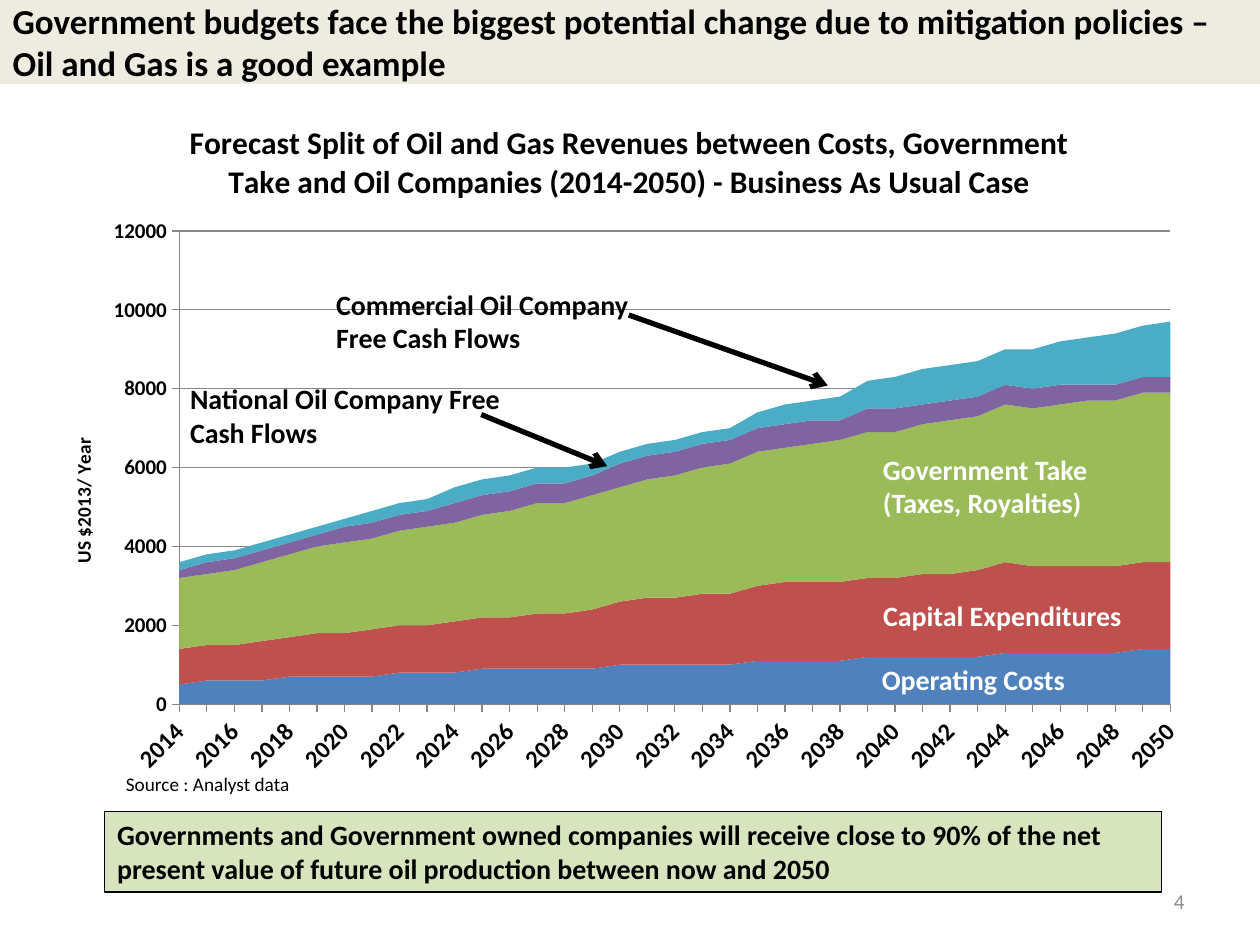
from lxml import etree
from pptx import Presentation
from pptx import util as u
from pptx.chart import data as chart_data
from pptx.dml.color import RGBColor
from pptx.enum import chart as charts, shapes, text
from pptx.oxml import ns

Pt = u.Pt
BLACK = RGBColor(0x00, 0x00, 0x00)
WHITE = RGBColor(0xFF, 0xFF, 0xFF)
GREY = RGBColor(0x8C, 0x8C, 0x8C)
AXIS_GREY = RGBColor(0x86, 0x86, 0x86)
BEIGE = RGBColor(0xEE, 0xEC, 0xE1)
PALE_GREEN = RGBColor(0xD7, 0xE4, 0xBD)
BLUE = RGBColor(0x4F, 0x81, 0xBD)
RED = RGBColor(0xC0, 0x50, 0x4D)
GREEN = RGBColor(0x9B, 0xBB, 0x59)
PURPLE = RGBColor(0x80, 0x64, 0xA2)
TEAL = RGBColor(0x4B, 0xAC, 0xC6)
FONT = "Calibri"

# Content
TITLE = ("Government budgets face the biggest potential change due to "
         "mitigation policies – Oil and Gas is a good example")
CHART_TITLE = ("Forecast Split of Oil and Gas Revenues between Costs, Government "
               "Take and Oil Companies (2014-2050) - Business As Usual Case")
AXIS_TITLE = "US $2013/ Year"
MESSAGE = ("Governments and Government owned companies will receive close to 90% of "
           "the net present value of future oil production between now and 2050")
YEARS = range(2014, 2051)
# Series in hundreds of US$ per year
SERIES = [
    ("Series 1", BLUE, [5, 6, 6, 6, 7, 7, 7, 7, 8, 8, 8, 9, 9, 9, 9, 9, 10, 10, 10,
                        10, 10, 11, 11, 11, 11, 12, 12, 12, 12, 12, 13, 13, 13, 13,
                        13, 14, 14]),
    ("Series 2", RED, [9, 9, 9, 10, 10, 11, 11, 12, 12, 12, 13, 13, 13, 14, 14, 15, 16,
                       17, 17, 18, 18, 19, 20, 20, 20, 20, 20, 21, 21, 22, 23, 22, 22,
                       22, 22, 22, 22]),
    ("Series 3", GREEN, [18, 18, 19, 20, 21, 22, 23, 23, 24, 25, 25, 26, 27, 28, 28, 29,
                         29, 30, 31, 32, 33, 34, 34, 35, 36, 37, 37, 38, 39, 39, 40, 40,
                         41, 42, 42, 43, 43]),
    ("Series 4", PURPLE, [2, 3, 3, 3, 3, 3, 4, 4, 4, 4, 5, 5, 5, 5, 5, 5, 6, 6, 6, 6, 6,
                          6, 6, 6, 5, 6, 6, 5, 5, 5, 5, 5, 5, 4, 4, 4, 4]),
    ("Series 5", TEAL, [2, 2, 2, 2, 2, 2, 2, 3, 3, 3, 4, 4, 4, 4, 4, 3, 3, 3, 3, 3, 3,
                        4, 5, 5, 6, 7, 8, 9, 9, 9, 9, 10, 11, 12, 13, 13, 14]),
]
# Text, box (left, top, width, height), format
LABELS = [
    ("Operating Costs", (496.8, 375.1, 121, 25.2), dict(color=WHITE, wrap=False)),
    ("Capital Expenditures", (497.5, 338.4, 152.6, 25.2), dict(color=WHITE, wrap=False)),
    ("Government Take\n(Taxes, Royalties)", (497.5, 254.9, 132.5, 44),
     dict(color=WHITE, wrap=False)),
    ("National Oil Company Free Cash Flows", (101.5, 214.6, 210.2, 44), {}),
    ("Commercial Oil Company Free Cash Flows", (185, 160.6, 210.2, 44), {}),
    ("Source : Analyst data", (64.8, 437.8, 103, 20.9),
     dict(size=11, bold=False, wrap=False)),
    ("4", (516.2, 500.4, 167.8, 28.8),
     dict(size=12, bold=False, color=GREY, align=text.PP_ALIGN.RIGHT,
          anchor=text.MSO_ANCHOR.MIDDLE)),
]
ARROWS = [(275, 236.9, 347, 266.4), (359.3, 180, 473, 220.3)]


def points(box):
    return [Pt(value) for value in box]


def style_font(font, size, bold=True, color=BLACK):
    font.name, font.size, font.bold = FONT, Pt(size), bold
    font.color.rgb = color


def write(shape, words, size=16, bold=True, color=BLACK, align=text.PP_ALIGN.LEFT,
          anchor=text.MSO_ANCHOR.TOP, wrap=True):
    frame = shape.text_frame
    frame.text = words
    frame.word_wrap = wrap
    frame.auto_size = text.MSO_AUTO_SIZE.NONE
    frame.vertical_anchor = anchor
    for paragraph in frame.paragraphs:
        paragraph.alignment = align
        for run in paragraph.runs:
            style_font(run.font, size, bold, color)


def place(element, index, inner=False, **fractions):
    """Give a chart part a manual layout, in fractions of the chart."""
    for old in element.findall(ns.qn("c:layout")):
        element.remove(old)
    layout = etree.Element(ns.qn("c:layout"))
    manual = etree.SubElement(layout, ns.qn("c:manualLayout"))
    settings = {"layoutTarget": "inner"} if inner else {}
    settings.update(xMode="edge", yMode="edge", **fractions)
    for tag, value in settings.items():
        etree.SubElement(manual, ns.qn("c:" + tag)).set("val", str(value))
    element.insert(index, layout)


def write_title(title, words, size, x, y):
    title.text_frame.text = words
    style_font(title.text_frame.paragraphs[0].runs[0].font, size)
    place(title._element, 1, x=x, y=y)


def add_area_chart(slide):
    content = chart_data.CategoryChartData(number_format="0")
    content.categories = YEARS
    for name, _, hundreds in SERIES:
        content.add_series(name, [100 * value for value in hundreds])
    chart = slide.shapes.add_chart(charts.XL_CHART_TYPE.AREA_STACKED,
                                   *points((18, 54, 670.3, 396)), content).chart
    style_font(chart.font, 10, bold=False)
    chart.has_legend = False
    chart.plots[0].vary_by_categories = False
    for series, (_, color, _) in zip(chart.plots[0].series, SERIES):
        series.format.fill.solid()
        series.format.fill.fore_color.rgb = color

    # Axes
    years, values = chart.category_axis, chart.value_axis
    for axis, size in ((years, 14), (values, 12)):
        style_font(axis.tick_labels.font, size)
        axis.major_tick_mark = charts.XL_TICK_MARK.OUTSIDE
        axis.minor_tick_mark = charts.XL_TICK_MARK.NONE
        axis.format.line.color.rgb = AXIS_GREY
    values.minimum_scale, values.maximum_scale, values.major_unit = 0, 12000, 2000
    values.tick_labels.number_format = "0"
    values.tick_labels.number_format_is_linked = False
    values.has_major_gridlines = True
    values.major_gridlines.format.line.color.rgb = AXIS_GREY
    values._element.find(ns.qn("c:crossBetween")).set("val", "midCat")

    # Slanted labels on every second year, a tick on each
    years.has_major_gridlines = False
    body = years._element.find(ns.qn("c:txPr")).find(ns.qn("a:bodyPr"))
    body.set("rot", "-2700000")
    body.set("vert", "horz")
    last = years._element.find(ns.qn("c:noMultiLvlLbl"))
    for tag, step in (("c:tickLblSkip", "2"), ("c:tickMarkSkip", "1")):
        skip = etree.Element(ns.qn(tag))
        skip.set("val", step)
        last.addprevious(skip)

    # Titles and plot area
    write_title(chart.chart_title, CHART_TITLE, 18, x=0.13, y=0.03)
    write_title(values.axis_title, AXIS_TITLE, 11, x=0.03, y=0.49)
    turned = values.axis_title.text_frame._txBody.find(ns.qn("a:bodyPr"))
    turned.set("rot", "-5400000")
    turned.set("vert", "horz")
    plot_area = chart._chartSpace.find(".//" + ns.qn("c:plotArea"))
    place(plot_area, 0, inner=True, x=0.126, y=0.197, w=0.845, h=0.683)


def add_arrow(slide, ends):
    arrow = slide.shapes.add_connector(shapes.MSO_CONNECTOR.STRAIGHT, *points(ends))
    arrow.line.color.rgb = BLACK
    arrow.line.width = Pt(3)
    etree.SubElement(arrow.line._get_or_add_ln(), ns.qn("a:tailEnd")).set("type", "arrow")
    etree.SubElement(arrow._element.spPr, ns.qn("a:effectLst"))


def main():
    presentation = Presentation()
    presentation.slide_width, presentation.slide_height = Pt(720), Pt(540)
    slide = presentation.slides.add_slide(presentation.slide_layouts[5])

    # Title band
    title = slide.shapes.title
    title.left, title.top, title.width, title.height = points((0, 0, 720, 48))
    title.fill.solid()
    title.fill.fore_color.rgb = BEIGE
    write(title, TITLE, size=20, anchor=text.MSO_ANCHOR.MIDDLE)

    # Chart with its labels and arrows
    add_area_chart(slide)
    for words, box, style in LABELS:
        write(slide.shapes.add_textbox(*points(box)), words, **style)
    for ends in ARROWS:
        add_arrow(slide, ends)

    # Key message
    message = slide.shapes.add_shape(shapes.MSO_SHAPE.RECTANGLE,
                                     *points((59.8, 463.7, 604.1, 46.1)))
    message.shadow.inherit = False
    message.fill.solid()
    message.fill.fore_color.rgb = PALE_GREEN
    message.line.color.rgb = BLACK
    message.line.width = Pt(0.75)
    write(message, MESSAGE)

    presentation.save("out.pptx")


if __name__ == "__main__":
    main()
